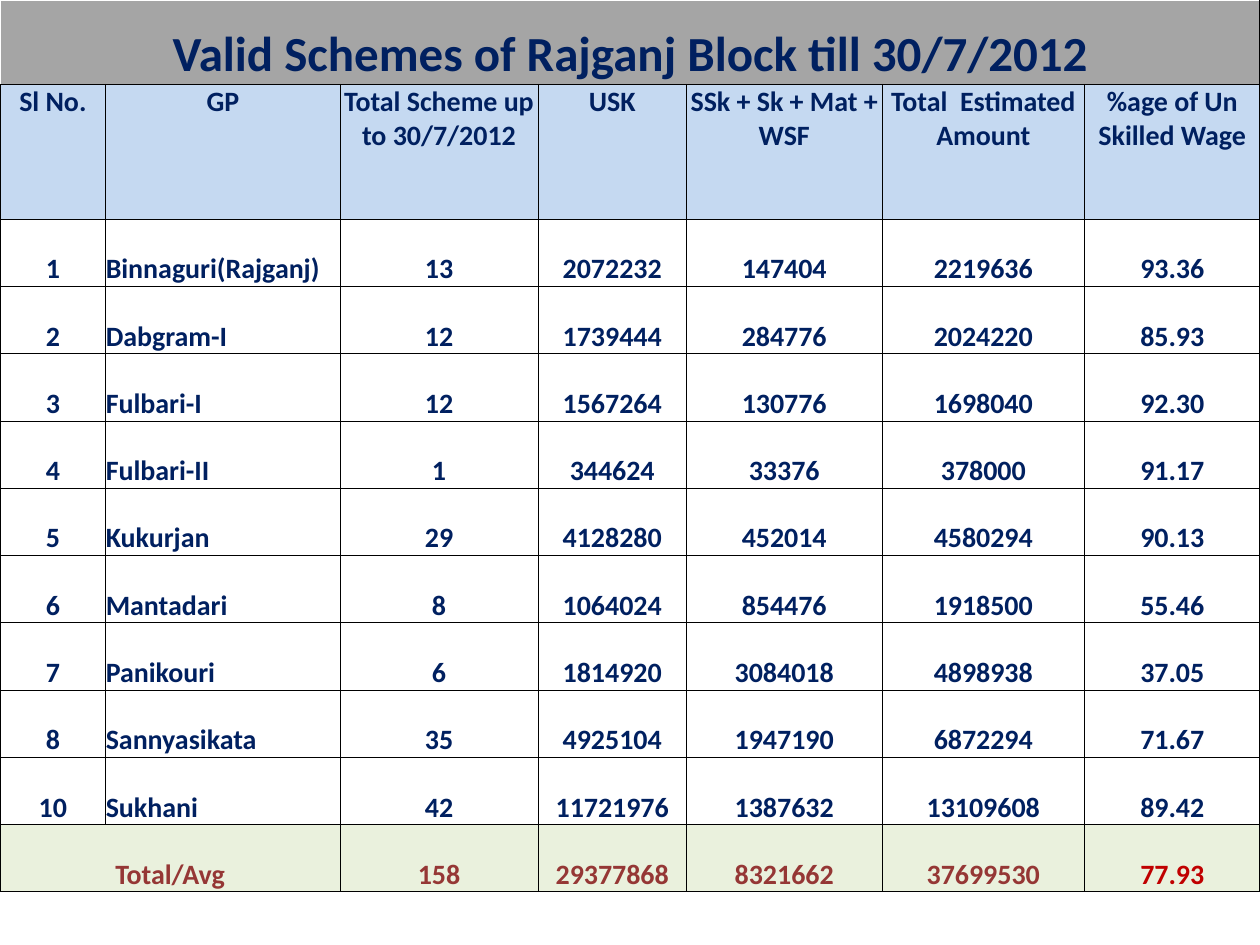
from dataclasses import dataclass
from typing import Any

from lxml import etree
from pptx import Presentation
from pptx import util as u
from pptx.dml.color import RGBColor
from pptx.enum import text
from pptx.oxml.ns import qn

COLUMN_WIDTHS = [0.84, 1.86, 1.57, 1.18, 1.55, 1.61, 1.39]
TITLE_HEIGHT, HEADER_HEIGHT, TABLE_HEIGHT = 0.67, 1.07, 7.08

TITLE = "Valid Schemes of Rajganj Block till 30/7/2012"
HEADERS = ["Sl No.", "GP", "Total Scheme up to 30/7/2012", "USK",
           "SSk + Sk + Mat + WSF", "Total  Estimated Amount",
           "%age of Un Skilled Wage"]
SCHEMES = [
    ["1", "Binnaguri(Rajganj)", "13", "2072232", "147404", "2219636", "93.36"],
    ["2", "Dabgram-I", "12", "1739444", "284776", "2024220", "85.93"],
    ["3", "Fulbari-I", "12", "1567264", "130776", "1698040", "92.30"],
    ["4", "Fulbari-II", "1", "344624", "33376", "378000", "91.17"],
    ["5", "Kukurjan", "29", "4128280", "452014", "4580294", "90.13"],
    ["6", "Mantadari", "8", "1064024", "854476", "1918500", "55.46"],
    ["7", "Panikouri", "6", "1814920", "3084018", "4898938", "37.05"],
    ["8", "Sannyasikata", "35", "4925104", "1947190", "6872294", "71.67"],
    ["10", "Sukhani", "42", "11721976", "1387632", "13109608", "89.42"],
]
TOTALS = ["Total/Avg", None, "158", "29377868", "8321662", "37699530", "77.93"]


def color(hex_value):
    return RGBColor.from_string(hex_value)


@dataclass
class TableSlide:
    """Style of the report and the slide being filled."""
    slide: Any
    font: str = "Calibri"
    size: int = 16
    ink: str = "002060"
    border: str = "000000"
    border_width: float = 0.5

    def add_table(self, widths, heights):
        frame = self.slide.shapes.add_table(
            len(heights), len(widths), 0, 0,
            u.Inches(sum(widths)), u.Inches(sum(heights)))
        table = frame.table
        table.first_row = table.horz_banding = False
        for column, width in zip(table.columns, widths):
            column.width = u.Inches(width)
        for row, height in zip(table.rows, heights):
            row.height = u.Inches(height)
        return table

    def add_borders(self, cell, sides):
        properties = cell._tc.get_or_add_tcPr()
        for side in sides:
            line = etree.SubElement(properties, qn(f"a:ln{side}"),
                                    w=str(u.Pt(self.border_width)))
            fill = etree.SubElement(line, qn("a:solidFill"))
            etree.SubElement(fill, qn("a:srgbClr"), val=self.border)

    def format_cell(self, cell, fill=None, anchor=text.MSO_ANCHOR.BOTTOM,
                    sides="LRTB"):
        cell.margin_left = cell.margin_right = 0
        cell.margin_top = cell.margin_bottom = 0
        cell.vertical_anchor = anchor
        self.add_borders(cell, sides)
        if fill:
            cell.fill.solid()
            cell.fill.fore_color.rgb = color(fill)
        else:
            cell.fill.background()

    def add_text(self, cell, words, align=text.PP_ALIGN.CENTER, size=None, ink=None):
        paragraph = cell.text_frame.paragraphs[0]
        paragraph.alignment = align
        run = paragraph.add_run()
        run.text = words
        run.font.name = self.font
        run.font.size = u.Pt(size or self.size)
        run.font.bold = True
        run.font.color.rgb = color(ink or self.ink)

    def fill_row(self, row, values, inks=None, aligns=None, **cell_format):
        for index, (cell, words) in enumerate(zip(row.cells, values)):
            self.format_cell(cell, **cell_format)
            if words:
                self.add_text(cell, words,
                              align=(aligns or {}).get(index, text.PP_ALIGN.CENTER),
                              ink=(inks or {}).get(index))


def main():
    presentation = Presentation()
    presentation.slide_width = u.Inches(10)
    presentation.slide_height = u.Inches(7.5)
    report = TableSlide(presentation.slides.add_slide(presentation.slide_layouts[6]))

    # Grid: title row, header row, then equal rows for schemes and totals
    row_count = len(SCHEMES) + 1
    row_height = (TABLE_HEIGHT - TITLE_HEIGHT - HEADER_HEIGHT) / row_count
    table = report.add_table(
        COLUMN_WIDTHS, [TITLE_HEIGHT, HEADER_HEIGHT] + [row_height] * row_count)
    title_row, header_row, *scheme_rows, total_row = table.rows
    last_row, last_column = len(table.rows) - 1, len(COLUMN_WIDTHS) - 1

    # Title across all columns
    table.cell(0, 0).merge(table.cell(0, last_column))
    for cell in title_row.cells:
        report.format_cell(cell, fill="A5A5A5", sides="RB")
    report.add_text(table.cell(0, 0), TITLE, size=28)

    # Column headers
    report.fill_row(header_row, HEADERS, fill="C5D9F1", anchor=text.MSO_ANCHOR.TOP)

    # One row for each scheme, with the GP name at the left
    for row, values in zip(scheme_rows, SCHEMES):
        report.fill_row(row, values, aligns={1: text.PP_ALIGN.LEFT})

    # Totals
    table.cell(last_row, 0).merge(table.cell(last_row, 1))
    inks = dict.fromkeys(range(last_column), "953735") | {last_column: "C00000"}
    report.fill_row(total_row, TOTALS, inks=inks, fill="EAF1DD")

    presentation.save("out.pptx")


if __name__ == "__main__":
    main()
